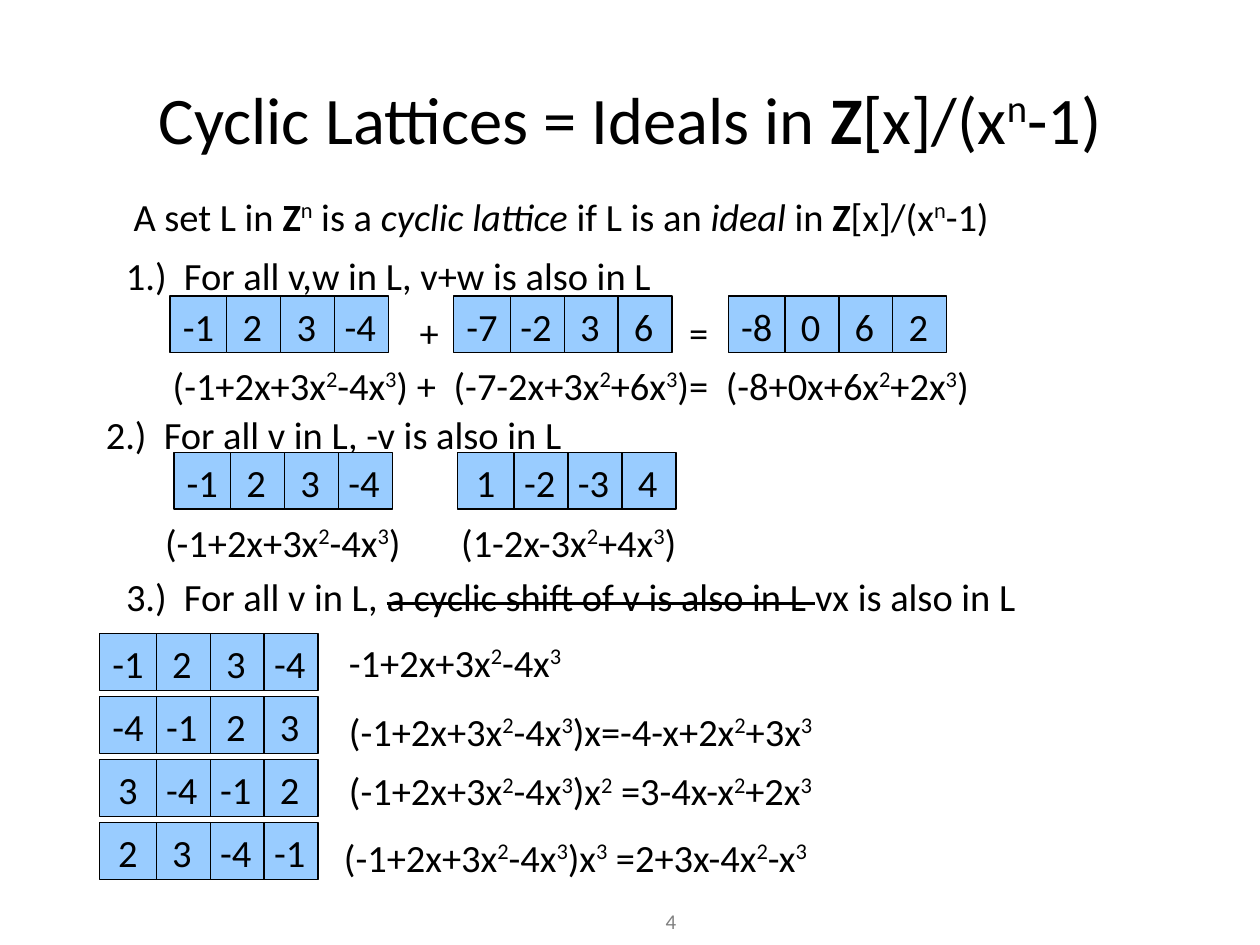
"""Build the slide on cyclic lattices as ideals of a polynomial ring."""
from dataclasses import dataclass
from itertools import groupby

from lxml import etree
from pptx import Presentation
from pptx import util as u
from pptx.dml.color import RGBColor
from pptx.enum import shapes, text
from pptx.oxml import ns


@dataclass(frozen=True)
class Theme:
    font: str = "Calibri"
    ink: str = "000000"
    muted: str = "808080"
    cell: str = "99CCFF"
    title: float = 38
    body: float = 22
    small: float = 12
    line: float = 0.75


@dataclass(frozen=True)
class Line:
    col: float
    row: float
    width: float
    words: str
    tabs: tuple[float, ...] = ()


@dataclass(frozen=True)
class Vector:
    col: float
    row: float
    values: tuple[int, ...]


THEME = Theme()
COLS, ROWS = 100, 75
CELL, PITCH = 4.5, 4.28
LINE_HEIGHT = 3.4
INSETS = (0.09, 0.06, 0.09, 0.04)
MARKS = {"*": "bold", "_": "italic", "~": "strike"}

V = (-1, 2, 3, -4)
W = (-7, -2, 3, 6)
POLY = "(-1+2x+3x^2-4x^3)"
SHIFT_ROW, SHIFT_PITCH = 50.3, 5

VECTORS = [
    Vector(13.5, 23.5, V),
    Vector(36, 23.5, W),
    Vector(57.8, 23.5, tuple(a + b for a, b in zip(V, W))),
    Vector(13.8, 35.9, V),
    Vector(36.3, 35.9, tuple(-a for a in V)),
] + [Vector(7.9, SHIFT_ROW + SHIFT_PITCH * i, V[-i:] + V[:-i]) for i in range(len(V))]

LINES = [
    Line(9.7, 14.7, 79.4, "A set L in *Z*^n is a _cyclic lattice _if L is an _ideal _in *Z*[x]/(x^n-1)"),
    Line(9.1, 19.4, 47.6, "1.)\tFor all v,w in L, v+w is also in L", (4.6,)),
    Line(7.5, 32, 47.6, "2.)\tFor all v in L, -v is also in L", (4.6,)),
    Line(9.1, 44.9, 77.1, "3.)\tFor all v in L, ~a cyclic shift of v is also in L ~vx is also in L", (4.6,)),
    Line(32.4, 23.9, 4.5, "+"),
    Line(53.8, 23.9, 4.5, "="),
    Line(12.8, 28.1, 80.5, POLY + " +\t(-7-2x+3x^2+6x^3)=\t(-8+0x+6x^2+2x^3)", (22.3, 43.9)),
    Line(12.2, 40.6, 47.4, POLY + "\t(1-2x-3x^2+4x^3)", (23.5,)),
    Line(26.8, 50.1, 22.7, "-1+2x+3x^2-4x^3"),
    Line(26.8, 55.6, 47.6, POLY + "x=-4-x+2x^2+3x^3"),
    Line(26.8, 60.3, 47.6, POLY + "x^2 =3-4x-x^2+2x^3"),
    Line(26.4, 65.6, 47.6, POLY + "x^3 =2+3x-4x^2-x^3"),
]


def box(prs, col: float, row: float, width: float, height: float) -> list[int]:
    """Turn grid columns and rows into slide lengths."""
    x, y = prs.slide_width / COLS, prs.slide_height / ROWS
    return [round(n) for n in (col * x, row * y, width * x, height * y)]


def styled_runs(words: str) -> list[tuple[frozenset, str]]:
    """Split marked text into runs; ^ raises only the next character."""
    active, raised, styled = set(), False, []
    for char in words:
        if char in MARKS:
            active ^= {MARKS[char]}
        elif char == "^":
            raised = True
        else:
            styled.append((frozenset(active | ({"raised"} if raised else set())), char))
            raised = False
    return [(style, "".join(c for _, c in group))
            for style, group in groupby(styled, key=lambda item: item[0])]


def write(tf, words: str, *, size: float = THEME.body, color: str = THEME.ink,
          align=text.PP_ALIGN.LEFT, anchor=text.MSO_ANCHOR.TOP,
          wrap: bool = True, tabs: tuple[int, ...] = ()) -> None:
    """Fill a text frame with formatted runs."""
    tf.auto_size = text.MSO_AUTO_SIZE.NONE
    tf.word_wrap, tf.vertical_anchor = wrap, anchor
    tf.margin_left, tf.margin_top, tf.margin_right, tf.margin_bottom = map(u.Inches, INSETS)
    p = tf.paragraphs[0]
    p.alignment = align
    if tabs:
        stops = etree.SubElement(p._p.get_or_add_pPr(), ns.qn("a:tabLst"))
        for stop in tabs:
            etree.SubElement(stops, ns.qn("a:tab"), pos=str(stop), algn="l")
    for style, part in styled_runs(words):
        r = p.add_run()
        r.text = part
        r.font.name, r.font.size = THEME.font, u.Pt(size)
        r.font.bold, r.font.italic = "bold" in style, "italic" in style
        r.font.color.rgb = RGBColor.from_string(color)
        if "strike" in style:
            r.font._element.set("strike", "sngStrike")
        if "raised" in style:
            r.font._element.set("baseline", "33000")


def draw_line(prs, s, line: Line) -> None:
    """Place one line of text."""
    sp = s.shapes.add_textbox(*box(prs, line.col, line.row, line.width, LINE_HEIGHT))
    write(sp.text_frame, line.words, tabs=tuple(box(prs, t, 0, 0, 0)[0] for t in line.tabs))


def draw_vector(prs, s, vector: Vector) -> None:
    """Draw a row of cells, each overlapping the one to its right."""
    for i, value in reversed(list(enumerate(vector.values))):
        sp = s.shapes.add_shape(shapes.MSO_SHAPE.ROUNDED_RECTANGLE,
                                *box(prs, vector.col + i * PITCH, vector.row, CELL, CELL))
        sp.adjustments[0] = 0
        sp.shadow.inherit = False
        sp.fill.solid()
        sp.fill.fore_color.rgb = RGBColor.from_string(THEME.cell)
        sp.line.color.rgb = RGBColor.from_string(THEME.ink)
        sp.line.width = u.Pt(THEME.line)
        write(sp.text_frame, str(value), align=text.PP_ALIGN.CENTER,
              anchor=text.MSO_ANCHOR.MIDDLE, wrap=False)


def main() -> None:
    """Assemble and save the slide."""
    prs = Presentation()
    prs.slide_width, prs.slide_height = u.Inches(10), u.Inches(7.5)
    s = prs.slides.add_slide(prs.slide_layouts[5])
    title = s.shapes.title
    title.left, title.top, title.width, title.height = box(prs, 5, 3, 90, 12.5)
    write(title.text_frame, "Cyclic Lattices = Ideals in *Z*[x]/(x^n-1)", size=THEME.title,
          align=text.PP_ALIGN.CENTER, anchor=text.MSO_ANCHOR.MIDDLE)
    for line in LINES:
        draw_line(prs, s, line)
    for vector in VECTORS:
        draw_vector(prs, s, vector)
    number = s.shapes.add_textbox(*box(prs, 47.1, 71, 12.3, 4))
    write(number.text_frame, "4", size=THEME.small, color=THEME.muted,
          align=text.PP_ALIGN.CENTER, anchor=text.MSO_ANCHOR.MIDDLE)
    prs.save("out.pptx")


if __name__ == "__main__":
    main()
